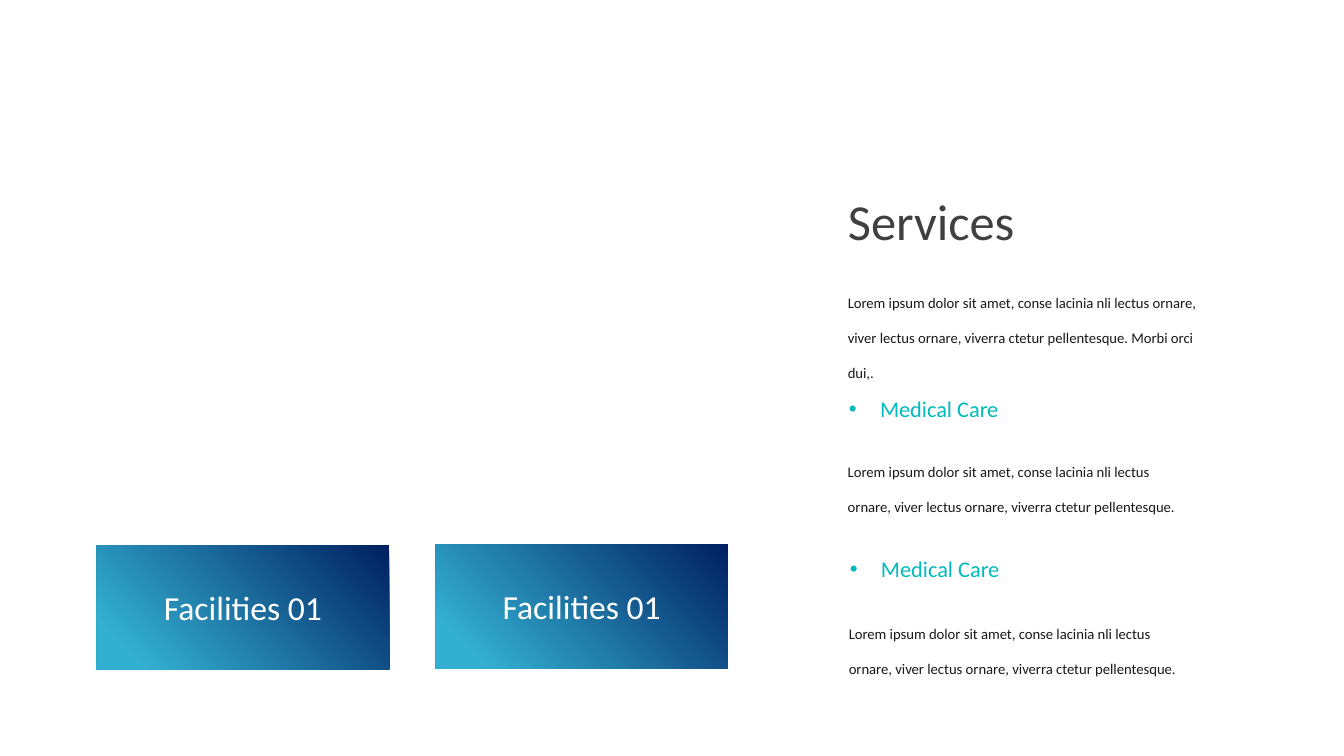
import pptx
import pptx.util
import pptx.dml.color
import pptx.enum.shapes
import pptx.enum.text
import pptx.oxml
import pptx.oxml.ns

COLORS = {"title": "404040", "body": "181818", "accent": "01BABC",
          "label": "FFFFFF", "glow": "33AFD2", "navy": "002060"}
FORMATS = {
    "title": {"size": pptx.util.Pt(36), "bold": False},
    "body": {"size": pptx.util.Pt(10.5)},
    "accent": {"size": pptx.util.Pt(16)},
    "label": {"size": pptx.util.Pt(24)},
}
ALIGN = pptx.enum.text.PP_ALIGN
NS = pptx.oxml.ns.nsdecls("a")
inch = pptx.util.Inches


def write(s, text, style, align=ALIGN.LEFT):
    """Fill a shape with one formatted paragraph and return it."""
    tf = s.text_frame
    tf.word_wrap = True
    tf.auto_size = pptx.enum.text.MSO_AUTO_SIZE.SHAPE_TO_FIT_TEXT
    tf.vertical_anchor = pptx.enum.text.MSO_ANCHOR.TOP
    p = tf.paragraphs[0]
    p.alignment = align
    r = p.add_run()
    r.text = text
    r.font.name = "Calibri"
    r.font.color.rgb = pptx.dml.color.RGBColor.from_string(COLORS[style])
    for name, value in FORMATS[style].items():
        setattr(r.font, name, value)
    return p


prs = pptx.Presentation()
prs.slide_width, prs.slide_height = inch(13.33), inch(7.5)
slide = prs.slides.add_slide(prs.slide_layouts[5])
shapes = slide.shapes

# Title at the head of the right column
COLUMN = 8.31
title = shapes.title
title.left, title.top, title.width, title.height = map(inch, (COLUMN, 1.84, 4.49, 0.71))
write(title, "Services", "title")

# Body paragraphs
LOREM = ("Lorem ipsum dolor sit amet, conse lacinia nli lectus ornare, "
         "viver lectus ornare, viverra ctetur pellentesque.")
for left, top, width, text in [(COLUMN, 2.69, 3.85, LOREM + " Morbi orci dui,."),
                               (COLUMN, 4.37, 3.54, LOREM),
                               (COLUMN + 0.01, 5.97, 3.54, LOREM)]:
    s = shapes.add_textbox(inch(left), inch(top), inch(width), inch(0.76))
    write(s, text, "body").line_spacing = 2.0

# Bulleted service names
for left, top in [(COLUMN + 0.01, 3.87), (COLUMN + 0.02, 5.46)]:
    s = shapes.add_textbox(inch(left), inch(top), inch(3.53), inch(0.37))
    pPr = write(s, "Medical Care", "accent")._p.get_or_add_pPr()
    pPr.set("marL", str(inch(0.31)))
    pPr.set("indent", str(-inch(0.31)))
    for xml in (f'<a:buFont {NS} typeface="Arial"/>', f'<a:buChar {NS} char="•"/>'):
        pPr.append(pptx.oxml.parse_xml(xml))

# Facility cards: radial gradient from the lower left corner, label on top
CARD_W, CARD_H, LABEL_W, LABEL_H = 2.9, 1.23, 2.36, 0.5
for left, top in [(0.96, 5.41), (4.32, 5.4)]:
    card = shapes.add_shape(pptx.enum.shapes.MSO_SHAPE.RECTANGLE,
                            inch(left), inch(top), inch(CARD_W), inch(CARD_H))
    card.shadow.inherit = False
    card.line.fill.background()
    card.fill.gradient()
    for stop, position, color in zip(card.fill.gradient_stops, (0.12, 1), ("glow", "navy")):
        stop.position = position
        stop.color.rgb = pptx.dml.color.RGBColor.from_string(COLORS[color])
    grad = card._element.spPr.find(pptx.oxml.ns.qn("a:gradFill"))
    grad.replace(grad.find(pptx.oxml.ns.qn("a:lin")), pptx.oxml.parse_xml(
        f'<a:path {NS} path="circle"><a:fillToRect t="100000" r="100000"/></a:path>'))
    label = shapes.add_textbox(inch(left + (CARD_W - LABEL_W) / 2),
                               inch(top + (CARD_H - LABEL_H) / 2),
                               inch(LABEL_W), inch(LABEL_H))
    write(label, "Facilities 01", "label", ALIGN.CENTER)

prs.save("out.pptx")
